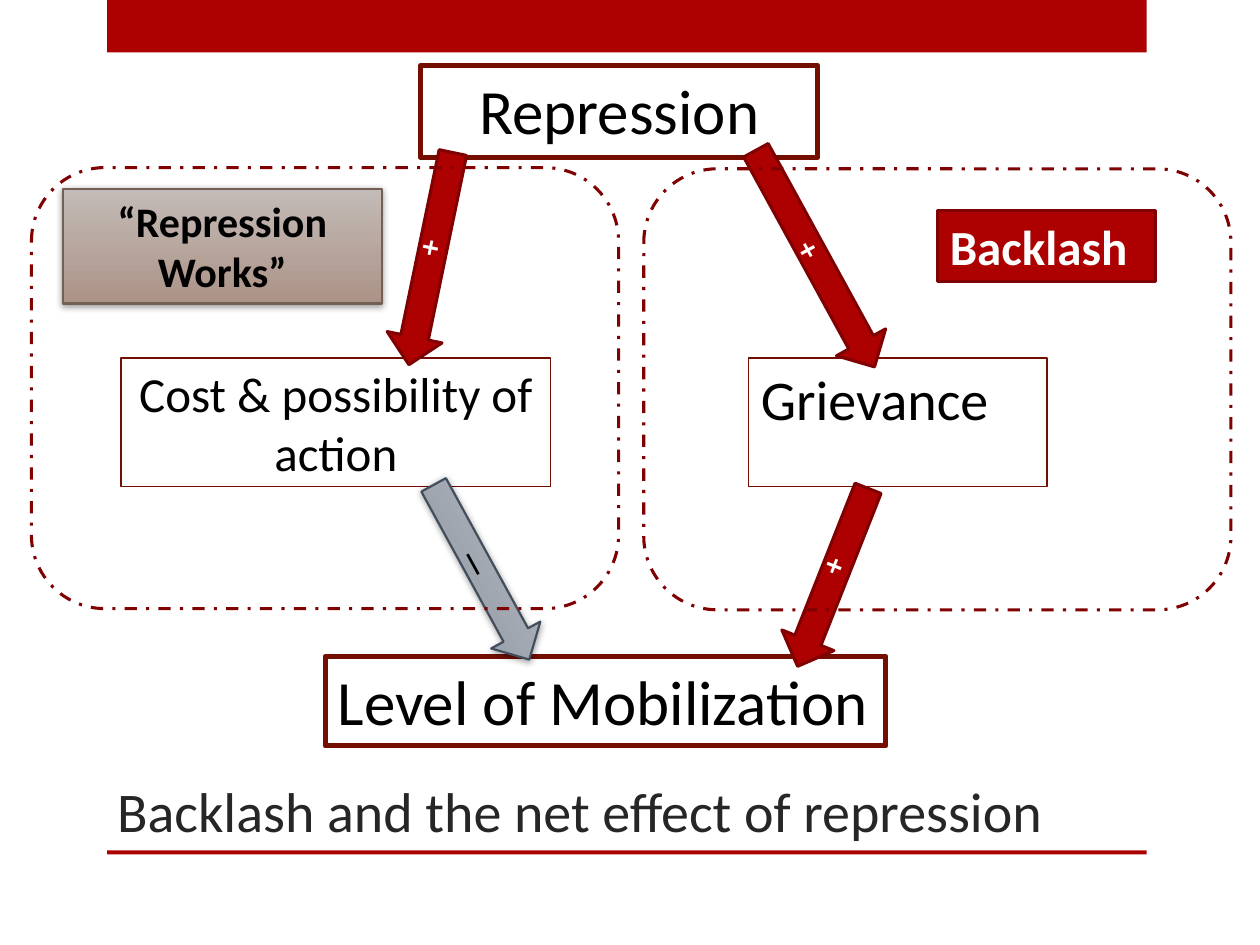
from dataclasses import dataclass
from typing import Optional

from lxml.etree import SubElement
from pptx import Presentation
from pptx.dml.color import RGBColor
from pptx.enum.dml import MSO_LINE_DASH_STYLE as Dash
from pptx.enum.shapes import MSO_SHAPE as Preset
from pptx.enum.text import MSO_ANCHOR as Anchor, MSO_AUTO_SIZE as AutoSize, PP_ALIGN as Align
from pptx.oxml.ns import qn
from pptx.util import Pt

COLORS = {
    "red": "AD0101", "dark red": "800101", "maroon": "730E00",
    "black": "000000", "white": "FFFFFF", "title": "262626",
    "slate light": "B7BABF", "slate dark": "8A94A2", "slate line": "424E5B",
    "taupe light": "C3BBB7", "taupe dark": "AC9387", "taupe line": "726056",
}


@dataclass
class Box:
    left: float
    top: float
    width: float
    height: float
    text: str = ""
    size: float = 18
    color: str = "black"
    bold: bool = False
    fill: tuple = ()
    line: Optional[str] = None
    weight: float = 1.75
    anchor: Anchor = Anchor.TOP
    align: Align = Align.CENTER
    wrap: bool = True
    preset: Preset = Preset.RECTANGLE
    rotation: float = 0
    dash: Optional[Dash] = None
    shadow: bool = False


def color_of(name: str) -> RGBColor:
    return RGBColor.from_string(COLORS[name])


def set_all(target, values: dict) -> None:
    for name, value in values.items():
        setattr(target, name, value)


def write_text(shape, box: Box) -> None:
    set_all(shape.text_frame, {"text": box.text, "word_wrap": box.wrap,
                               "vertical_anchor": box.anchor, "auto_size": AutoSize.NONE})
    paragraph = shape.text_frame.paragraphs[0]
    paragraph.alignment = box.align
    font = paragraph.runs[0].font
    set_all(font, {"name": "Calibri", "size": Pt(box.size), "bold": box.bold})
    font.color.rgb = color_of(box.color)


def paint(shape, box: Box) -> None:
    if len(box.fill) == 2:
        shape.fill.gradient()
        shape.fill.gradient_angle = 270
        for stop, name, position in zip(shape.fill.gradient_stops, box.fill, (0, 1)):
            stop.color.rgb = color_of(name)
            stop.position = position
    elif box.fill:
        shape.fill.solid()
        shape.fill.fore_color.rgb = color_of(box.fill[0])
    else:
        shape.fill.background()
    if box.line:
        shape.line.color.rgb = color_of(box.line)
        set_all(shape.line, {"width": Pt(box.weight), "dash_style": box.dash})
    else:
        shape.line.fill.background()


def add_shadow(shape) -> None:
    effects = shape._element.spPr.find(qn("a:effectLst"))
    outer = SubElement(effects, qn("a:outerShdw"), blurRad=str(Pt(4)), dist=str(Pt(1)),
                       dir=str(88 * 60000), rotWithShape="0")
    color = SubElement(outer, qn("a:srgbClr"), val=COLORS["black"])
    SubElement(color, qn("a:alpha"), val="40000")


def draw_box(slide, box: Box) -> None:
    shape = slide.shapes.add_shape(box.preset, Pt(box.left), Pt(box.top),
                                   Pt(box.width), Pt(box.height))
    shape.rotation = box.rotation
    shape.shadow.inherit = False
    paint(shape, box)
    if box.shadow:
        add_shadow(shape)
    if box.text:
        write_text(shape, box)


def arrow(left: float, top: float, width: float, rotation: float, text: str = "+ ",
          **changes) -> Box:
    style = {"color": "white", "fill": ("red",), "line": "dark red", **changes}
    return Box(left, top, width, 32, text, bold=True, anchor=Anchor.MIDDLE,
               preset=Preset.RIGHT_ARROW, rotation=rotation, **style)


def region(left: float, top: float) -> Box:
    return Box(left, top, 335.5, 252, line="dark red", dash=Dash.DASH_DOT,
               preset=Preset.ROUNDED_RECTANGLE)


TITLE = Box(59.76, 450, 594, 36, "Backlash and the net effect of repression", 32, "title",
            anchor=Anchor.BOTTOM, align=Align.LEFT)

BOXES = [
    Box(61.2, 0, 594, 30, fill=("red",)),
    Box(61.2, 486, 594, 2.2, fill=("red",)),
    Box(240.5, 37.5, 226.8, 52.5, "Repression", 36, line="maroon", weight=3),
    Box(427.7, 204.5, 170.6, 73.4, "Grievance", 32, line="maroon", weight=0.75,
        align=Align.LEFT, wrap=False),
    Box(69.1, 204.5, 245.5, 73.4, "Cost & possibility of action", 28, line="maroon",
        weight=0.75, anchor=Anchor.MIDDLE),
    Box(185.8, 375.1, 320.4, 51.1, "Level of Mobilization", 36, line="maroon", weight=3,
        align=Align.LEFT, wrap=False),
    arrow(395.3, 131.8, 141.1, 61.3),
    arrow(184.3, 131.8, 123.8, 101.7),
    arrow(421.2, 313.9, 109.4, 111.6),
    arrow(218.2, 311, 113.8, 61.3, "— ", color="black", fill=("slate light", "slate dark"),
          line="slate line", weight=1.25, shadow=True),
    Box(535.7, 120.2, 124.6, 41, "Backlash", 28, "white", True, ("red",), "dark red",
        align=Align.LEFT, wrap=False),
    Box(36, 108, 182.2, 65.5, "“Repression Works”", 24, bold=True,
        fill=("taupe light", "taupe dark"), line="taupe line", weight=1.25, shadow=True),
    region(18, 95.8),
    region(367.9, 96.5),
]


def main() -> None:
    presentation = Presentation()
    set_all(presentation, {"slide_width": Pt(720), "slide_height": Pt(540)})
    slide = presentation.slides.add_slide(presentation.slide_layouts[5])
    title = slide.shapes.title
    set_all(title, {side: Pt(getattr(TITLE, side))
                    for side in ("left", "top", "width", "height")})
    write_text(title, TITLE)
    for box in BOXES:
        draw_box(slide, box)
    presentation.save("out.pptx")


if __name__ == "__main__":
    main()
